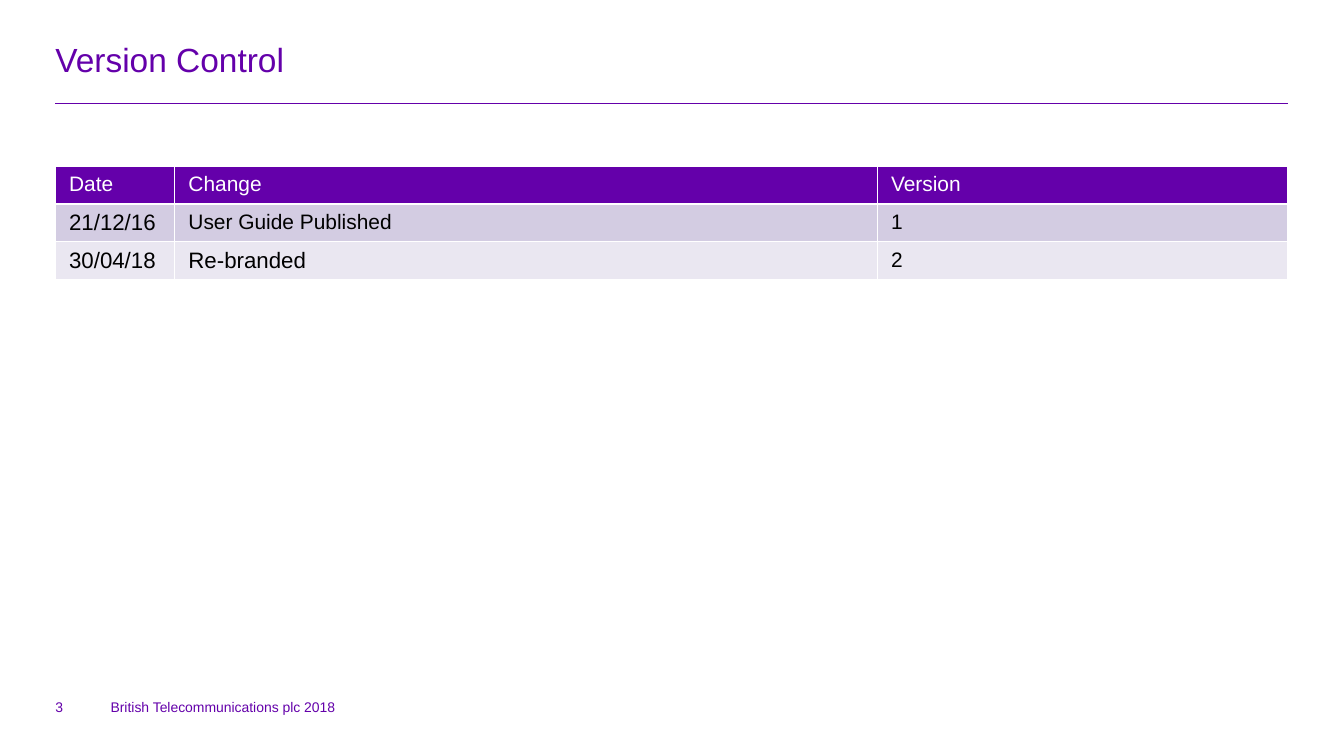
from lxml import etree
from pptx import Presentation
from pptx.dml.color import RGBColor
from pptx.enum.shapes import MSO_CONNECTOR
from pptx.enum.text import MSO_ANCHOR, MSO_AUTO_SIZE, PP_ALIGN
from pptx.oxml import parse_xml
from pptx.oxml.ns import nsdecls, qn
from pptx.util import Cm, Pt

STRAIGHT = MSO_CONNECTOR.STRAIGHT
MIDDLE, BOTTOM = MSO_ANCHOR.MIDDLE, MSO_ANCHOR.BOTTOM
LEFT = PP_ALIGN.LEFT
NO_FIT = MSO_AUTO_SIZE.NONE

COLORS = {
    "purple": "6400AA",
    "white": "FFFFFF",
    "black": "000000",
    "band_dark": "D3CCE2",
    "band_light": "EAE7F1",
}
MARGIN, CONTENT_WIDTH = 1.4, 31.19
HEADERS = ["Date", "Change", "Version"]
CHANGES = [
    [("21/12/16", 16), ("User Guide Published", 15), ("1", 15)],
    [("30/04/18", 16), ("Re-branded", 16), ("2", 15)],
]


def rgb(name):
    return RGBColor.from_string(COLORS[name])


def write(tf, text, size=10, color="purple", font="Arial"):
    p = tf.paragraphs[0]
    p.alignment = LEFT
    r = p.add_run()
    r.text = text
    r.font.size = Pt(size)
    r.font.name = font
    r.font.color.rgb = rgb(color)


class SlideBuilder:
    """Adds styled elements to one slide."""

    def __init__(self, slide):
        self.slide = slide
        self.shapes = slide.shapes

    def frame(self, sp, anchor):
        tf = sp.text_frame
        tf.margin_left = tf.margin_right = tf.margin_top = tf.margin_bottom = 0
        tf.word_wrap = True
        tf.auto_size = NO_FIT
        tf.vertical_anchor = anchor
        return tf

    def title(self, text, x, y, w, h):
        sp = self.shapes.title
        sp.left, sp.top, sp.width, sp.height = Cm(x), Cm(y), Cm(w), Cm(h)
        write(self.frame(sp, MIDDLE), text, size=24)

    def text(self, text, x, y, w, h):
        sp = self.shapes.add_textbox(Cm(x), Cm(y), Cm(w), Cm(h))
        write(self.frame(sp, BOTTOM), text)

    def rule(self, x, y, w):
        line = self.shapes.add_connector(STRAIGHT, Cm(x), Cm(y), Cm(x + w), Cm(y))
        line.line.color.rgb = rgb("purple")
        line.line.width = Pt(0.25)
        etree.SubElement(line._element.spPr, qn("a:effectLst"))

    def cell(self, cell, text, size, color, fill):
        cell.margin_left = cell.margin_right = Cm(0.35)
        cell.margin_top = cell.margin_bottom = Cm(0.16)
        cell.fill.solid()
        cell.fill.fore_color.rgb = rgb(fill)
        write(cell.text_frame, text, size=size, color=color)
        tcPr = cell._tc.get_or_add_tcPr()
        for i, side in enumerate("LRTB"):
            tcPr.insert(i, parse_xml(
                f'<a:ln{side} {nsdecls("a")} w="{Pt(1)}"><a:solidFill>'
                f'<a:srgbClr val="{COLORS["white"]}"/></a:solidFill></a:ln{side}>'))

    def table(self, headers, rows, x, y, widths, row_height):
        n = len(rows) + 1
        table = self.shapes.add_table(
            n, len(headers), Cm(x), Cm(y), Cm(sum(widths)), Cm(row_height * n)).table
        for column, width in zip(table.columns, widths):
            column.width = Cm(width)
        for c, header in enumerate(headers):
            self.cell(table.cell(0, c), header, 15, "white", "purple")
        for r, row in enumerate(rows, 1):
            fill = "band_dark" if r % 2 else "band_light"
            for c, (text, size) in enumerate(row):
                self.cell(table.cell(r, c), text, size, "black", fill)


def main():
    prs = Presentation()
    prs.slide_width, prs.slide_height = Cm(34.01), Cm(19)
    s = SlideBuilder(prs.slides.add_slide(prs.slide_layouts[5]))
    s.rule(MARGIN, 2.6, CONTENT_WIDTH)
    s.text("British Telecommunications plc 2018", 2.8, 17.37, 6, 0.74)
    s.title("Version Control", MARGIN, 0.89, CONTENT_WIDTH, 1.19)
    s.table(HEADERS, CHANGES, MARGIN, 4.2, [3.02, 17.78, 10.39], 0.96)
    s.text("3", MARGIN, 17.3, 1, 0.8)
    prs.save("out.pptx")


if __name__ == "__main__":
    main()
